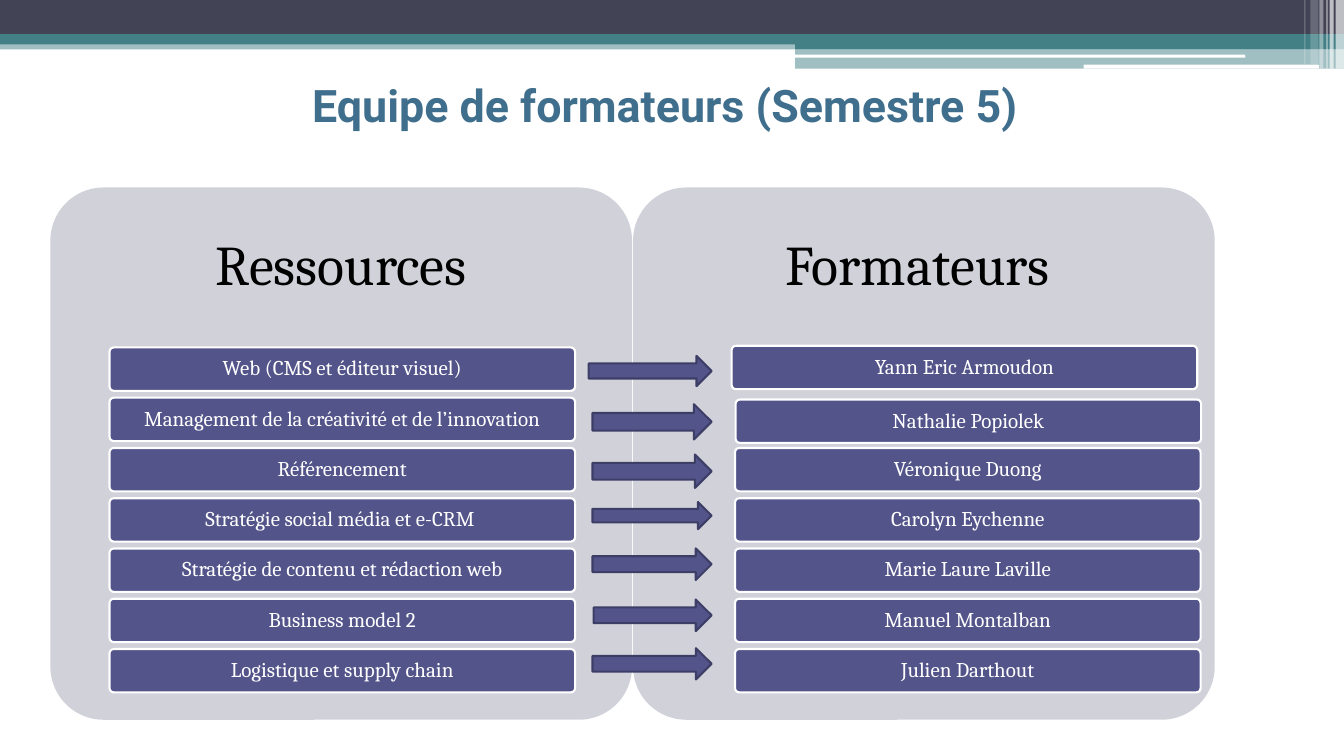
from dataclasses import dataclass
from typing import Optional

from lxml import etree
from pptx import Presentation
from pptx.dml.color import RGBColor
from pptx.enum import shapes, text
from pptx.oxml import ns
from pptx.util import Pt

WHITE = RGBColor(0xFF, 0xFF, 0xFF)
BLACK = RGBColor(0x00, 0x00, 0x00)
SLATE = RGBColor(0x42, 0x44, 0x56)
TEAL = RGBColor(0x43, 0x80, 0x86)
TITLE_BLUE = RGBColor(0x40, 0x6F, 0x8D)
PANEL_GREY = RGBColor(0xD1, 0xD1, 0xDA)
VIOLET = RGBColor(0x53, 0x54, 0x8A)
DARK_VIOLET = RGBColor(0x3D, 0x3E, 0x66)

RECTANGLE = shapes.MSO_SHAPE.RECTANGLE
ROUNDED = shapes.MSO_SHAPE.ROUNDED_RECTANGLE
ARROW = shapes.MSO_SHAPE.RIGHT_ARROW

PANEL_TOP, PANEL_WIDTH, PANEL_HEIGHT = 133.9, 415.5, 380.2
HEADING_HEIGHT = 113.8
ROW_TOP, ROW_PITCH, ROW_WIDTH, ROW_HEIGHT = 248.2, 35.9, 332.6, 31
RESOURCE_LEFT, TRAINER_LEFT = 78.2, 525
ARROW_TIP = 508.3


@dataclass
class Box:
    left: float
    top: float
    width: float
    height: float


@dataclass
class Band:
    box: Box
    color: RGBColor
    opacity: int = 100
    kind: shapes.MSO_SHAPE = RECTANGLE


@dataclass
class Panel:
    heading: str
    left: float


@dataclass
class Course:
    resource: str
    trainer: str
    arrow: Box
    shift_x: float = 0
    shift_y: float = 0


def arrow_box(left: float, top: float, height: float) -> Box:
    return Box(left, top, ARROW_TIP - left, height)


BANDS = [
    Band(Box(0, 28.8, 960, 6.5), TEAL, 50),
    Band(Box(0, 0, 960, 24.5), SLATE),
    Band(Box(0, 24.5, 960, 7.2), TEAL),
    Band(Box(568, 28, 392, 7), TEAL),
    Band(Box(568, 34.8, 392, 14.2), TEAL, 50),
    Band(Box(567.5, 39, 322, 2.2), WHITE, kind=ROUNDED),
    Band(Box(774, 46.2, 168, 2.8), WHITE, kind=ROUNDED),
    Band(Box(954, 0, 6, 49), WHITE, 65),
    Band(Box(949.7, 0, 2.9, 49), WHITE, 65),
    Band(Box(947.5, 0, 0.8, 49), WHITE, 60),
    Band(Box(942.5, 0, 2.9, 49), WHITE, 40),
    Band(Box(936, 0, 5.8, 46), WHITE, 20),
    Band(Box(931.7, 0, 0.8, 46), WHITE, 30),
]

PANELS = [Panel("Ressources", 36), Panel("Formateurs ", 452.2)]

COURSES = [
    Course("Web (CMS et éditeur visuel)", "Yann Eric Armoudon",
           arrow_box(420.5, 254.2, 21.6), -2.4, -1.2),
    Course("Management de la créativité et de l’innovation", "Nathalie Popiolek",
           arrow_box(423.2, 288.7, 25.2), 0.4, 1.3),
    Course("Référencement", "Véronique Duong", arrow_box(423.2, 324.7, 23.8)),
    Course("Stratégie social média et e-CRM ", "Carolyn Eychenne",
           arrow_box(423.2, 358.6, 19.4)),
    Course("Stratégie de contenu et rédaction web", "Marie Laure Laville",
           arrow_box(423.2, 391.7, 22.6)),
    Course("Business model 2", "Manuel Montalban", arrow_box(424.1, 428.2, 22.6)),
    Course("Logistique et supply chain", "Julien Darthout",
           arrow_box(423.2, 463, 22.3)),
]


def add_block(slide, kind: shapes.MSO_SHAPE, box: Box, fill: RGBColor,
              outline: Optional[RGBColor] = None, opacity: int = 100):
    shape = slide.shapes.add_shape(
        kind, Pt(box.left), Pt(box.top), Pt(box.width), Pt(box.height))
    shape.shadow.inherit = False
    shape.fill.solid()
    shape.fill.fore_color.rgb = fill
    if opacity < 100:
        color = shape.fill._xPr.find(".//" + ns.qn("a:srgbClr"))
        etree.SubElement(color, ns.qn("a:alpha"), val=str(opacity * 1000))
    if outline is None:
        shape.line.fill.background()
    else:
        shape.line.color.rgb = outline
        shape.line.width = Pt(1.5)
    return shape


def add_text_box(slide, box: Box):
    return slide.shapes.add_textbox(
        Pt(box.left), Pt(box.top), Pt(box.width), Pt(box.height))


def write(shape, words: str, size: float, font: str, color: RGBColor,
          bold: bool = False, line_spacing: float = 0.9,
          inset_x: float = 7.2, inset_y: float = 3.6):
    frame = shape.text_frame
    frame.text = words
    frame.word_wrap = True
    frame.vertical_anchor = text.MSO_ANCHOR.MIDDLE
    frame.margin_left = frame.margin_right = Pt(inset_x)
    frame.margin_top = frame.margin_bottom = Pt(inset_y)
    paragraph = frame.paragraphs[0]
    paragraph.alignment = text.PP_ALIGN.CENTER
    paragraph.line_spacing = line_spacing
    run = paragraph.runs[0]
    run.font.size = Pt(size)
    run.font.name = font
    run.font.bold = bold
    run.font.color.rgb = color
    return paragraph


def add_row(slide, words: str, left: float, top: float) -> None:
    row = add_block(slide, ROUNDED, Box(left, top, ROW_WIDTH, ROW_HEIGHT), VIOLET, WHITE)
    row.adjustments[0] = 0.1
    write(row, words, 15, "Cambria", WHITE, inset_x=2.9, inset_y=2.2)


def add_panel(slide, panel: Panel) -> None:
    block = add_block(
        slide, ROUNDED, Box(panel.left, PANEL_TOP, PANEL_WIDTH, PANEL_HEIGHT), PANEL_GREY)
    block.adjustments[0] = 0.1
    heading = add_text_box(
        slide, Box(panel.left, PANEL_TOP, PANEL_WIDTH, HEADING_HEIGHT))
    write(heading, panel.heading, 40, "Cambria", BLACK, inset_x=12, inset_y=12)


def main() -> None:
    presentation = Presentation()
    presentation.slide_width, presentation.slide_height = Pt(960), Pt(540)
    slide = presentation.slides.add_slide(presentation.slide_layouts[6])

    # Header bands
    for band in BANDS:
        add_block(slide, band.kind, band.box, band.color, opacity=band.opacity)

    # Title
    title = add_text_box(slide, Box(54.7, 31.7, 832.3, 86.4))
    paragraph = write(title, "Equipe de formateurs (Semestre 5)", 32, "Roboto",
                      TITLE_BLUE, bold=True, line_spacing=1.0)
    paragraph.space_before = Pt(3)
    properties = paragraph._p.get_or_add_pPr()
    properties.set("marL", str(Pt(28.8)))
    properties.set("indent", str(Pt(-20.2)))

    # Panels with their headings
    for panel in PANELS:
        add_panel(slide, panel)

    # Courses, each pointing to its trainer
    for index, course in enumerate(COURSES):
        top = ROW_TOP + index * ROW_PITCH
        add_row(slide, course.resource, RESOURCE_LEFT, top)
        add_row(slide, course.trainer, TRAINER_LEFT + course.shift_x, top + course.shift_y)
        add_block(slide, ARROW, course.arrow, VIOLET, DARK_VIOLET)

    presentation.save("out.pptx")


if __name__ == "__main__":
    main()
